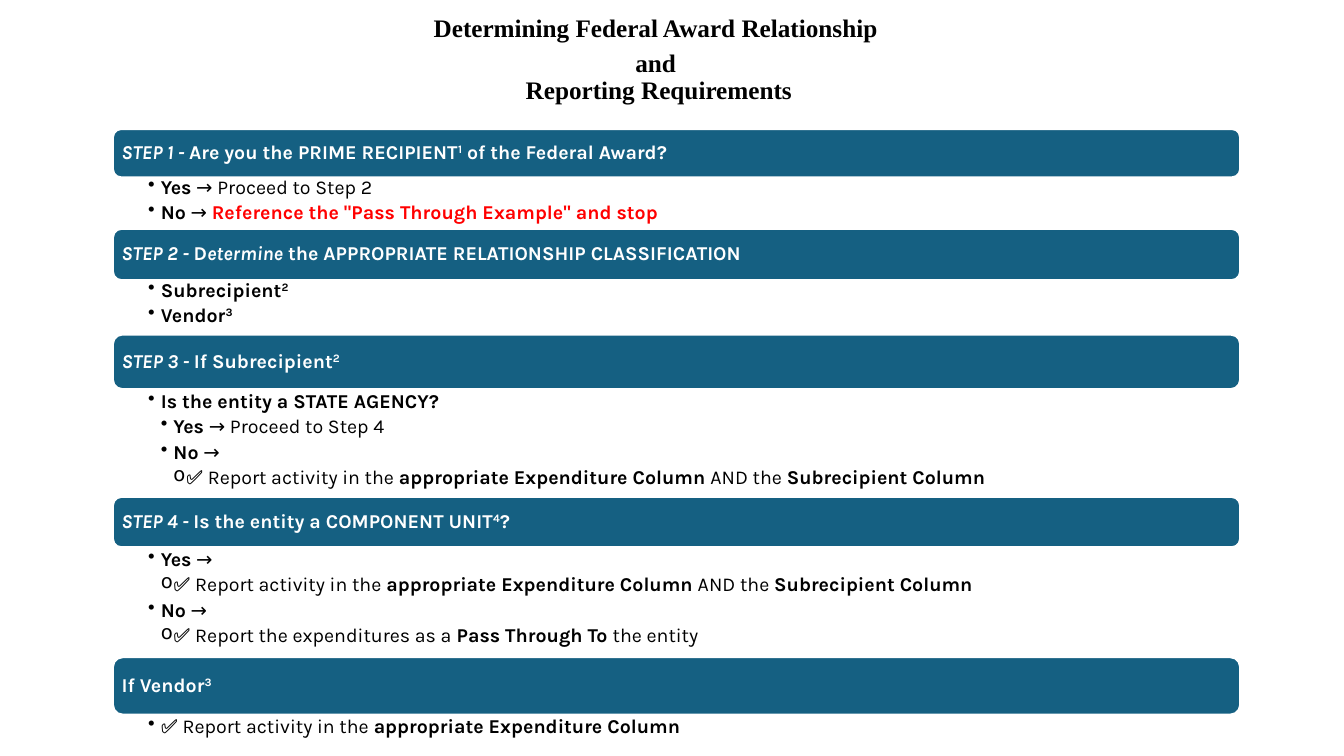
from dataclasses import dataclass, replace

from lxml.etree import SubElement
from pptx import Presentation
from pptx.dml.color import RGBColor as Color
from pptx.enum.shapes import MSO_SHAPE as Shape
from pptx.enum.text import MSO_ANCHOR as Anchor, PP_ALIGN as Align
from pptx.oxml.ns import qn
from pptx.util import Inches, Pt

WHITE = Color(0xFF, 0xFF, 0xFF)
BLACK = Color(0, 0, 0)
BLUE = Color(0x15, 0x60, 0x82)
RED = Color(0xFF, 0, 0)
LEFT, WIDTH = 1.12, 11.18
STEP = 0.125


@dataclass(frozen=True)
class Bit:
    text: str
    bold: bool = False
    slant: bool = False
    sup: bool = False
    color: Color = BLACK
    face: str = "Karla"
    size: int = 14


@dataclass(frozen=True)
class Item:
    level: int
    bits: list[Bit]
    mark: str = "•"


@dataclass(frozen=True)
class Block:
    top: float
    height: float
    head: list[Bit]
    body_top: float
    body_height: float
    items: list[Item]


def bold(text: str) -> Bit:
    return Bit(text, bold=True)


def slant(text: str) -> Bit:
    return Bit(text, bold=True, slant=True)


def sup(text: str) -> Bit:
    return Bit(text, bold=True, sup=True)


def add_run(para, bit: Bit) -> None:
    run = para.add_run()
    run.text = bit.text
    font = run.font
    font.name, font.size = bit.face, Pt(bit.size)
    font.bold, font.italic = bit.bold, bit.slant
    font.color.rgb = bit.color
    if bit.sup:
        run._r.get_or_add_rPr().set("baseline", "30000")


def set_frame(frame, anchor: Anchor, left: float, top: float, right: float) -> None:
    frame.word_wrap = True
    frame.vertical_anchor = anchor
    frame.margin_left, frame.margin_right = Inches(left), Inches(right)
    frame.margin_top = frame.margin_bottom = Inches(top)


def add_item(para, item: Item) -> None:
    para.level = item.level
    para.line_spacing = 0.9
    para.space_after = Pt(3.1)
    props = para._p.get_or_add_pPr()
    props.set("marL", str(Inches(STEP * item.level)))
    props.set("indent", str(-Inches(STEP)))
    SubElement(props, qn("a:buChar")).set("char", item.mark)
    for bit in item.bits:
        add_run(para, bit)


def add_block(slide, block: Block) -> None:
    bar = slide.shapes.add_shape(
        Shape.ROUNDED_RECTANGLE, Inches(LEFT), Inches(block.top),
        Inches(WIDTH), Inches(block.height))
    bar.shadow.inherit = False
    bar.fill.solid()
    bar.fill.fore_color.rgb = BLUE
    bar.line.color.rgb = WHITE
    bar.line.width = Pt(1.5)
    set_frame(bar.text_frame, Anchor.MIDDLE, 0.06, 0.06, 0.06)
    para = bar.text_frame.paragraphs[0]
    para.alignment = Align.LEFT
    para.line_spacing = 0.9
    for bit in block.head:
        add_run(para, replace(bit, color=WHITE))

    body = slide.shapes.add_textbox(
        Inches(LEFT), Inches(block.body_top),
        Inches(WIDTH), Inches(block.body_height)).text_frame
    set_frame(body, Anchor.TOP, 0.35, 0.02, 0.11)
    for pos, item in enumerate(block.items):
        add_item(body.add_paragraph() if pos else body.paragraphs[0], item)


def add_title(slide) -> None:
    title = slide.shapes.title
    title.left, title.top = Inches(2.88), Inches(0.03)
    title.width, title.height = Inches(7.31), Inches(1.08)
    frame = title.text_frame
    set_frame(frame, Anchor.TOP, 0.1, 0.05, 0.1)
    lines = [("Determining Federal Award Relationship ", 1.15),
             ("and ", 1.15), ("Reporting Requirements", 0.9)]
    for pos, (text, gap) in enumerate(lines):
        para = frame.add_paragraph() if pos else frame.paragraphs[0]
        para.alignment = Align.CENTER
        para.line_spacing = gap
        para.space_before = Pt(0)
        add_run(para, Bit(text, bold=True, face="Times New Roman", size=18))


REPORT = [Bit("✅ Report activity in the "), bold("appropriate Expenditure Column")]
BOTH = REPORT + [Bit(" AND the "), bold("Subrecipient Column")]
YES = [bold("Yes"), Bit(" →")]
NO = [bold("No"), Bit(" →")]

BLOCKS = [
    Block(1.28, 0.48,
          [slant("STEP 1 - "), bold("Are you the PRIME RECIPIENT"), sup("1"),
           bold(" of the Federal Award?")],
          1.74, 0.49,
          [Item(1, [bold("Yes"), Bit(" → Proceed to Step 2")]),
           Item(1, [bold("No"), Bit(" → "),
                    Bit('Reference the "Pass Through Example" and stop',
                        bold=True, color=RED)])]),
    Block(2.27, 0.51,
          [slant("STEP 2 - "), bold("D"), slant("etermine"),
           bold(" the APPROPRIATE RELATIONSHIP CLASSIFICATION")],
          2.76, 0.56,
          [Item(1, [bold("Subrecipient"), sup("2")]),
           Item(1, [bold("Vendor"), sup("3")])]),
    Block(3.32, 0.54,
          [slant("STEP 3 - "), bold("If Subrecipient"), sup("2")],
          3.86, 1.07,
          [Item(1, [bold("Is the entity a STATE AGENCY?")]),
           Item(2, [bold("Yes"), Bit(" → Proceed to Step 4")]),
           Item(2, NO),
           Item(3, BOTH, "o")]),
    Block(4.93, 0.5,
          [slant("STEP 4 - "), bold("Is the entity a COMPONENT UNIT"),
           sup("4"), bold("?")],
          5.43, 1.09,
          [Item(1, YES),
           Item(2, BOTH, "o"),
           Item(1, NO),
           Item(2, [Bit("✅ Report the expenditures as a "),
                    bold("Pass Through To "), Bit("the entity")], "o")]),
    Block(6.52, 0.57,
          [bold("If Vendor"), sup("3")],
          7.09, 0.39,
          [Item(1, REPORT)]),
]


def main() -> None:
    deck = Presentation()
    deck.slide_width, deck.slide_height = Inches(13.33), Inches(7.5)
    slide = deck.slides.add_slide(deck.slide_layouts[5])
    add_title(slide)
    for block in BLOCKS:
        add_block(slide, block)
    deck.save("out.pptx")


if __name__ == "__main__":
    main()
